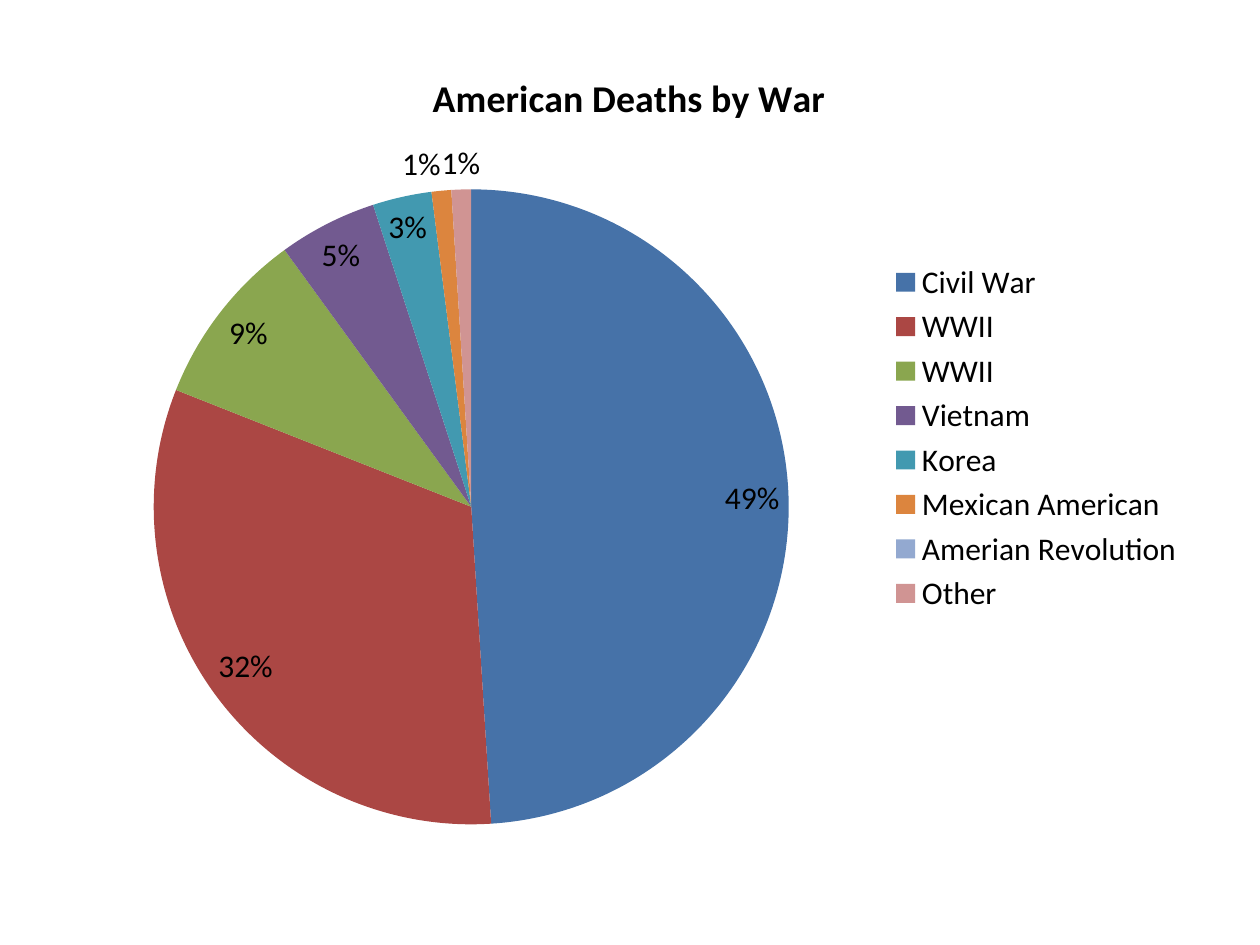
from lxml import etree
from pptx import Presentation, util as u
from pptx.chart.data import CategoryChartData
from pptx.dml.color import RGBColor
from pptx.enum import chart as c
from pptx.oxml.ns import qn

SLIDE_WIDTH, SLIDE_HEIGHT = u.Inches(10), u.Inches(7.5)
FONT = "Calibri"
TITLE = "American Deaths by War"
TEXT_COLOR = "000000"
COLORS = {
    "blue": "4672A8",
    "red": "AB4744",
    "green": "8AA64F",
    "purple": "725A90",
    "teal": "4299B0",
    "orange": "DC853E",
    "light blue": "93A9D0",
    "pink": "D09493",
}
WARS = [
    ("Civil War", 49, "blue"),
    ("WWII", 32, "red"),
    ("WWII", 9, "green"),
    ("Vietnam", 5, "purple"),
    ("Korea", 3, "teal"),
    ("Mexican American", 1, "orange"),
    ("Amerian Revolution", 0, "light blue"),
    ("Other", 1, "pink"),
]


def style_font(font, size, bold=False):
    font.name = FONT
    font.size = u.Pt(size)
    font.bold = bold
    font.color.rgb = RGBColor.from_string(TEXT_COLOR)


def set_layout(element, index, **values):
    for layout in element.findall(qn("c:layout")):
        element.remove(layout)
    layout = etree.Element(qn("c:layout"))
    manual = etree.SubElement(layout, qn("c:manualLayout"))
    for name, value in values.items():
        etree.SubElement(manual, qn(f"c:{name}")).set("val", str(value))
    element.insert(index, layout)


def add_pie(slide):
    data = CategoryChartData()
    data.categories = [name for name, share, color in WARS]
    data.add_series(TITLE, [share for name, share, color in WARS])
    frame = slide.shapes.add_chart(
        c.XL_CHART_TYPE.PIE,
        int(SLIDE_WIDTH * 0.05), int(SLIDE_HEIGHT / 30),
        int(SLIDE_WIDTH * 0.9), int(SLIDE_HEIGHT * 0.86), data,
    )
    chart = frame.chart
    style_font(chart.font, 18)
    return chart


def format_title(chart):
    chart.has_title = True
    title = chart.chart_title
    title.text_frame.text = TITLE
    style_font(title.text_frame.paragraphs[0].runs[0].font, 21.6, bold=True)
    set_layout(title._element, 1, xMode="edge", yMode="edge", x=0.32, y=0.04)


def format_legend(chart):
    chart.has_legend = True
    chart.legend.position = c.XL_LEGEND_POSITION.RIGHT
    chart.legend.include_in_layout = False
    style_font(chart.legend.font, 18)


def format_slices(chart):
    plot = chart.plots[0]
    plot.vary_by_categories = True
    series = plot.series[0]
    for index, (name, share, color) in enumerate(WARS):
        fill = series.points[index].format.fill
        fill.solid()
        fill.fore_color.rgb = RGBColor.from_string(COLORS[color])
    labels = series.data_labels
    labels.show_percentage = True
    labels.show_value = False
    labels.number_format = "0%"
    labels.number_format_is_linked = False
    labels.position = c.XL_LABEL_POSITION.BEST_FIT
    style_font(labels.font, 18)
    plot_area = chart._chartSpace.chart.plotArea
    set_layout(plot_area, 0, layoutTarget="inner", xMode="edge", yMode="edge",
               x=0.08, y=0.19, w=0.56, h=0.79)


def main():
    presentation = Presentation()
    presentation.slide_width = SLIDE_WIDTH
    presentation.slide_height = SLIDE_HEIGHT
    slide = presentation.slides.add_slide(presentation.slide_layouts[6])
    chart = add_pie(slide)
    format_title(chart)
    format_legend(chart)
    format_slices(chart)
    presentation.save("out.pptx")


if __name__ == "__main__":
    main()
